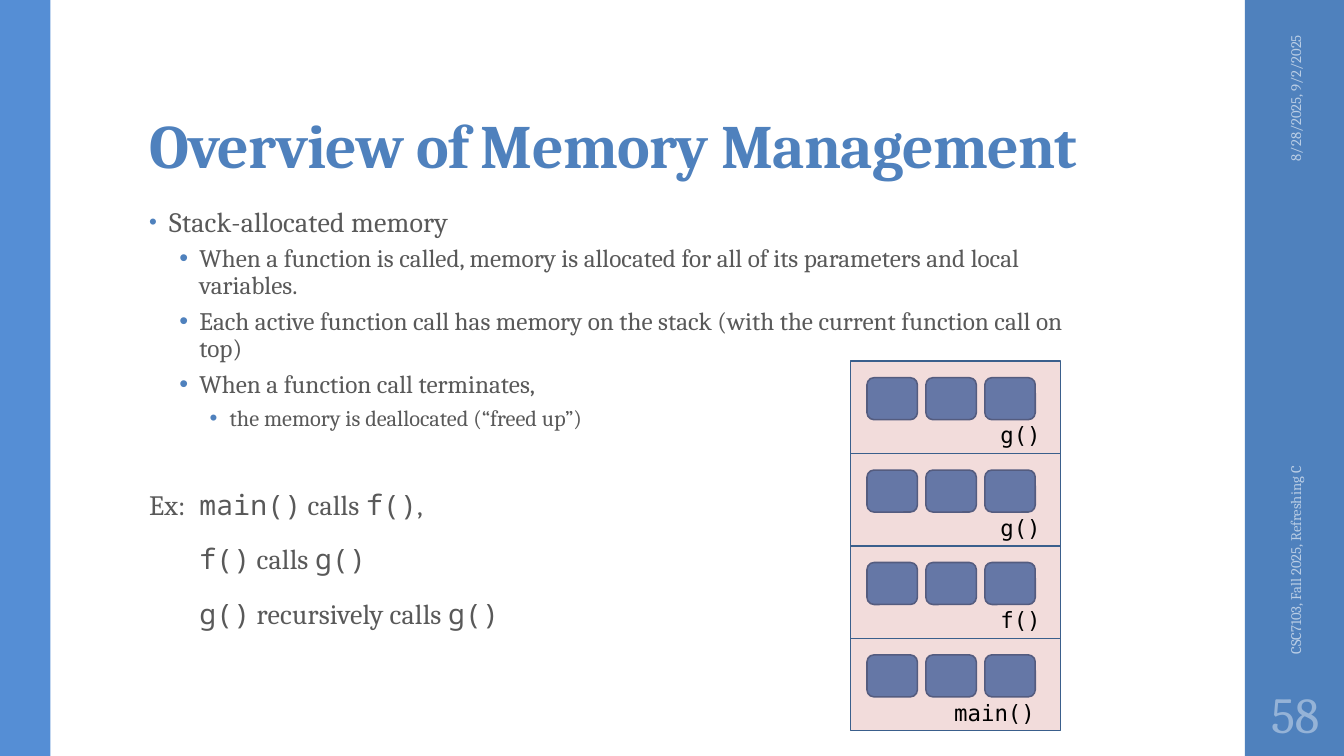
from dataclasses import dataclass
from lxml.etree import SubElement as Sub
from pptx import Presentation
from pptx.dml.color import RGBColor as Rgb
from pptx.enum.shapes import MSO_SHAPE as Shape
from pptx.enum.text import MSO_ANCHOR as Anchor, MSO_AUTO_SIZE as Fit, PP_ALIGN as Align
from pptx.oxml.ns import qn
from pptx.util import Pt

TITLE = "Overview of Memory Management"
# (level, text); level None has no bullet, and backticks mark code
BODY = [
    (0, "Stack-allocated memory"),
    (1, "When a function is called, memory is allocated for all of its parameters and local variables."),
    (1, "Each active function call has memory on the stack (with the current function call on top)"),
    (1, "When a function call terminates,"),
    (2, "the memory is deallocated (“freed up”)"),
    (None, "Ex:\t`main()` calls `f()`,"),
    (None, "\t`f()` calls `g()`"),
    (None, "\t`g()` recursively calls `g()`"),
]
# Calls from the bottom of the stack up: name, label offset, label width
CALLS = [("main()", 67, 73), ("f()", 100, 44), ("g()", 100, 44), ("g()", 100, 44)]
DATE = "8/28/2025, 9/2/2025"
COURSE = "CSC7103, Fall 2025, Refreshing C"
PAGE = "58"


@dataclass(frozen=True)
class Theme:
    blue: str = "4F81BD"
    light: str = "558ED5"
    edge: str = "3A5F8C"
    red: str = "C0504D"
    gray: str = "595959"
    black: str = "000000"
    pale: str = "B9CDE5"
    page: str = "95B3D7"
    serif: str = "Cambria"
    code: str = "Noto Sans Mono"
    label: str = "DejaVu Sans Mono"
    head: float = 44
    sizes: tuple = (20, 18, 16)
    small: float = 10.5
    big: float = 36


T = Theme()
SLIDE_W, SLIDE_H = 960, 540
BAR_X, BAR_W = 889.2, 72
STACK_X, STACK_Y, FRAME_W, FRAME_H = 607.5, 258, 150, 66
SLOT_X, SLOT_Y, SLOT_W, SLOT_H, SLOT_STEP = 11.8, 11.8, 36, 30, 42.1
LABEL_Y, LABEL_H = 39.6, 26.6
BULLET = dict(space_before=Pt(3), space_after=Pt(3), line_spacing=0.9)
PLAIN = dict(space_before=Pt(14), space_after=Pt(2), line_spacing=0.95)
EX_GAP = Pt(39)


def put(obj, **vals):
    for name, val in vals.items():
        setattr(obj, name, val)


def points(*nums):
    return [Pt(n) for n in nums]


def write(para, text, size, color, font=T.serif, bold=False, track=0):
    run = para.add_run()
    run.text = text
    put(run.font, size=Pt(size), name=font, bold=bold)
    run.font.color.rgb = Rgb.from_string(color)
    if track:
        run.font._element.set("spc", str(track))


def add_box(slide, shape, box, fill, edge=None, alpha=None):
    item = slide.shapes.add_shape(shape, *points(*box))
    item.shadow.inherit = False
    item.fill.solid()
    item.fill.fore_color.rgb = Rgb.from_string(fill)
    if alpha:
        color = item.fill._xPr.find(qn("a:solidFill"))[0]
        Sub(color, qn("a:alpha"), val=str(alpha * 1000))
    if edge:
        item.line.color.rgb = Rgb.from_string(edge)
        item.line.width = Pt(1.1)
    else:
        item.line.fill.background()


def add_text(slide, box, text, size, color, font=T.serif, align=Align.LEFT, turn=0, **frame):
    item = slide.shapes.add_textbox(*points(*box))
    item.rotation = turn
    put(item.text_frame, **{"word_wrap": True, **frame})
    para = item.text_frame.paragraphs[0]
    para.alignment = align
    write(para, text, size, color, font)


def add_bullet(para, level):
    props = para._p.get_or_add_pPr()
    put(para, level=level)
    props.set("marL", str(Pt(14.4 + 21.6 * level)))
    props.set("indent", str(Pt(-14.4)))
    Sub(Sub(props, qn("a:buClr")), qn("a:srgbClr"), val=T.blue)
    if level == 0:
        Sub(props, qn("a:buSzPct"), val="80000")
    Sub(props, qn("a:buFont"), typeface="Arial")
    Sub(props, qn("a:buChar"), char="•")


def add_title(slide):
    title = slide.shapes.title
    left, top, width, height = points(99.4, 23, 763.2, 110.2)
    put(title, left=left, top=top, width=width, height=height)
    put(title.text_frame, vertical_anchor=Anchor.BOTTOM, auto_size=Fit.NONE, word_wrap=True,
        margin_left=Pt(7.2), margin_right=Pt(7.2), margin_top=Pt(2.2), margin_bottom=Pt(3.6))
    para = title.text_frame.paragraphs[0]
    put(para, alignment=Align.LEFT, line_spacing=0.9)
    write(para, TITLE, T.head, T.blue, bold=True, track=-50)


def add_body(slide):
    frame = slide.shapes.add_textbox(*points(99.4, 144, 676.8, 342.7)).text_frame
    frame.word_wrap = True
    for i, (level, text) in enumerate(BODY):
        para = frame.add_paragraph() if i else frame.paragraphs[0]
        put(para, **(BULLET if level else PLAIN))
        if level is not None:
            add_bullet(para, level)
        elif BODY[i - 1][0] is not None:
            para.space_before = EX_GAP
        for n, part in enumerate(text.split("`")):
            if part:
                write(para, part, T.sizes[level or 0], T.gray,
                      T.code if n % 2 else T.serif, track=0 if level else 10)


def add_stack(slide):
    for i, (name, shift, width) in enumerate(CALLS):
        top = STACK_Y + FRAME_H * (len(CALLS) - 1 - i)
        for n in range(3):
            slot = (STACK_X + SLOT_X + n * SLOT_STEP, top + SLOT_Y, SLOT_W, SLOT_H)
            add_box(slide, Shape.ROUNDED_RECTANGLE, slot, T.blue, T.edge)
        add_box(slide, Shape.RECTANGLE, (STACK_X, top, FRAME_W, FRAME_H), T.red, T.edge, alpha=20)
        add_text(slide, (STACK_X + shift, top + LABEL_Y, width, LABEL_H), name, T.sizes[2],
                 T.black, T.label, word_wrap=False, auto_size=Fit.SHAPE_TO_FIT_TEXT)


def add_side(slide):
    middle = dict(vertical_anchor=Anchor.MIDDLE)
    add_text(slide, (850.3, 78.5, 149.8, 28.8), DATE, T.small, T.pale,
             align=Align.RIGHT, turn=270, **middle)
    add_text(slide, (784.1, 319, 282.2, 28.8), COURSE, T.small, T.pale, turn=270, **middle)
    sides = {f"margin_{side}": Pt(3.6) for side in ("left", "right", "top", "bottom")}
    add_text(slide, (BAR_X, 486, BAR_W, 46.8), PAGE, T.big, T.page,
             align=Align.CENTER, **middle, **sides)


def main():
    deck = Presentation()
    put(deck, slide_width=Pt(SLIDE_W), slide_height=Pt(SLIDE_H))
    slide = deck.slides.add_slide(deck.slide_layouts[5])
    add_box(slide, Shape.RECTANGLE, (BAR_X, 0, SLIDE_W - BAR_X, SLIDE_H), T.blue)
    add_box(slide, Shape.RECTANGLE, (0, 0, 36, SLIDE_H), T.light)
    add_title(slide)
    add_body(slide)
    add_stack(slide)
    add_side(slide)
    deck.save("out.pptx")


if __name__ == "__main__":
    main()
